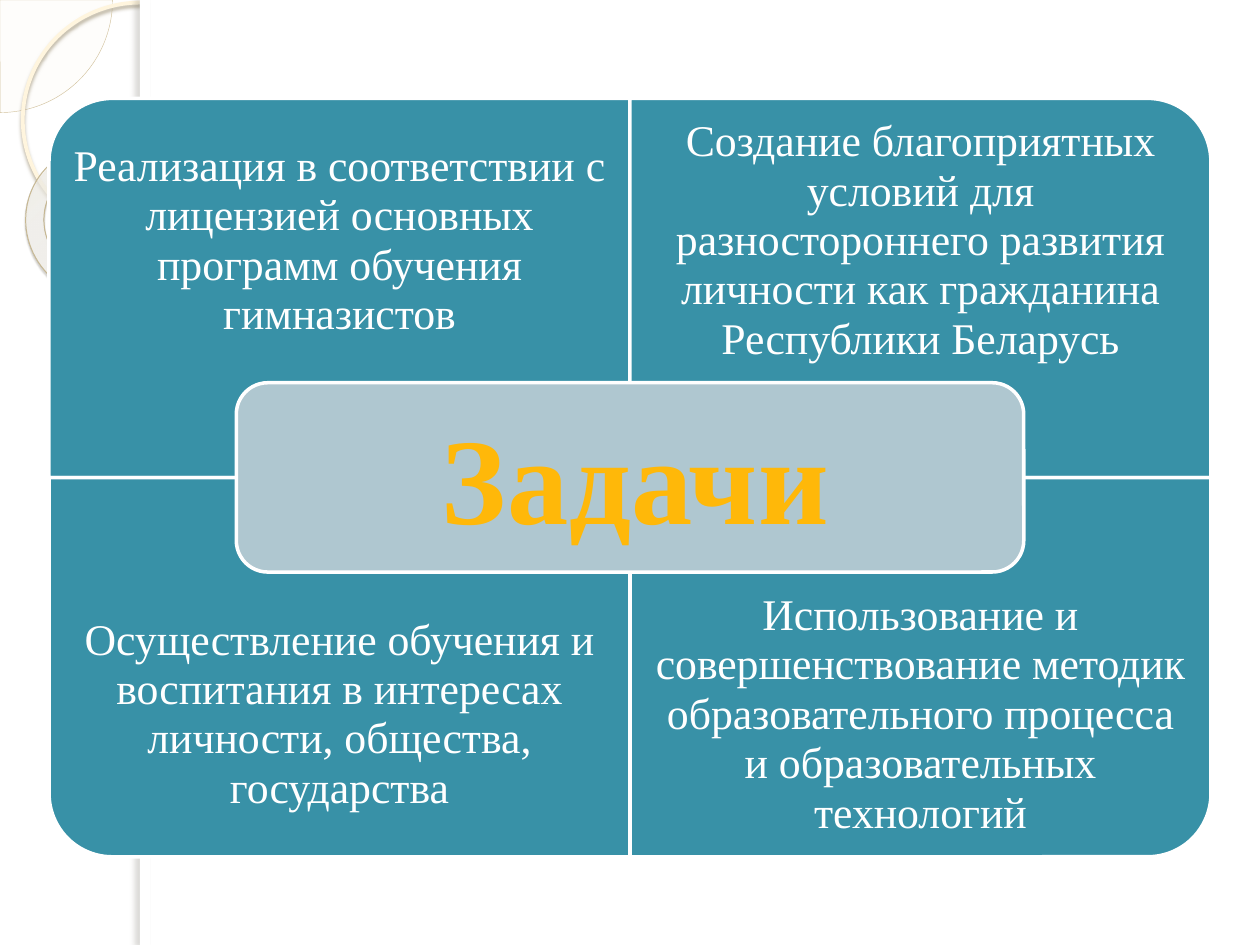
from pptx import Presentation
from pptx.dml.color import RGBColor
from pptx.enum.shapes import MSO_SHAPE
from pptx.enum.text import MSO_ANCHOR, MSO_AUTO_SIZE, PP_ALIGN
from pptx.oxml import parse_xml
from pptx.oxml.ns import nsdecls, qn
from pptx.util import Pt

COLORS = {
    "white": "FFFFFF", "card": "3891A7", "center": "AFC7D0", "gold": "FFB809",
    "pie": "FEFAF4", "pie_line": "D3C39F", "ring": "FFF5DE",
    "ring_shadow": "B0A68F", "donut_line": "C7B893", "donut_shadow": "5A5444",
    "strip_shadow": "736F63", "donut_inner": "FFFCF6", "donut_middle": "FFFEFB",
    "donut_outer": "F0D28E",
}
FONT = "Times New Roman"
CARD_FRAME = {
    "margin_left": Pt(13.5), "margin_right": Pt(13.5),
    "margin_top": Pt(13.5), "margin_bottom": Pt(13.5),
    "vertical_anchor": MSO_ANCHOR.MIDDLE, "word_wrap": True,
}
CARD_PARAGRAPH = {"alignment": PP_ALIGN.CENTER, "line_spacing": 0.94, "space_after": Pt(8.75)}
CARD_FONT = {"name": FONT, "size": Pt(25), "bold": False}
TITLE_FRAME = {
    "auto_size": MSO_AUTO_SIZE.NONE, "margin_top": Pt(10), "margin_bottom": Pt(0),
    "vertical_anchor": MSO_ANCHOR.TOP, "word_wrap": True,
}
TITLE_PARAGRAPH = {"alignment": PP_ALIGN.CENTER, "line_spacing": 1.0, "space_before": Pt(0)}
TITLE_FONT = {"name": FONT, "size": Pt(70), "bold": True}


def apply(target, values):
    """Set every attribute named in values on target."""
    for name, value in values.items():
        setattr(target, name, value)


class SlideBuilder:
    """Hold the palette and the slide that is being built."""

    def __init__(self, slide, colors):
        """Keep the slide and its colours."""
        self.slide = slide
        self.colors = colors

    def rgb(self, name):
        """Return a palette colour."""
        return RGBColor.from_string(self.colors[name])

    def color_xml(self, name, alpha):
        """Return a colour with opacity in percent."""
        return f'<a:srgbClr val="{self.colors[name]}"><a:alpha val="{alpha * 1000}"/></a:srgbClr>'

    def shape(self, kind, box, fill=None, line=None, shadow=None, alpha=100, rotation=0):
        """Add a preset shape."""
        part = self.slide.shapes.add_shape(kind, *map(Pt, box))
        part.rotation = rotation
        part.shadow.inherit = False
        if fill:
            part.fill.solid()
            part.fill.fore_color.rgb = self.rgb(fill)
            if alpha < 100:
                solid = part.element.spPr.find(qn("a:solidFill"))
                solid[0].append(parse_xml(f'<a:alpha {nsdecls("a")} val="{alpha * 1000}"/>'))
        else:
            part.fill.background()
        if line:
            name, width = line
            part.line.color.rgb = self.rgb(name)
            part.line.width = Pt(width)
        else:
            part.line.fill.background()
        if shadow:
            name, opacity, blur, distance, angle = shadow
            part.element.spPr.find(qn("a:effectLst")).append(parse_xml(
                f'<a:outerShdw {nsdecls("a")} blurRad="{Pt(blur)}" dist="{Pt(distance)}" '
                f'dir="{angle * 60000}" algn="tl" rotWithShape="0">'
                f'{self.color_xml(name, opacity)}</a:outerShdw>'))
        return part

    def radial_fill(self, part, stops, focus):
        """Replace a solid fill with a circular gradient."""
        stop_xml = "".join(
            f'<a:gs pos="{place * 1000}">{self.color_xml(name, alpha)}</a:gs>'
            for place, name, alpha in stops)
        edges = " ".join(f'{side}="{value * 1000}"' for side, value in zip("ltrb", focus))
        solid = part.element.spPr.find(qn("a:solidFill"))
        part.element.spPr.replace(solid, parse_xml(
            f'<a:gradFill {nsdecls("a")} rotWithShape="1"><a:gsLst>{stop_xml}</a:gsLst>'
            f'<a:path path="circle"><a:fillToRect {edges}/></a:path></a:gradFill>'))

    def set_wording(self, frame, wording, color, frame_style, paragraph_style, font_style):
        """Fill a text frame with one formatted paragraph."""
        apply(frame, frame_style)
        paragraph = frame.paragraphs[0]
        apply(paragraph, paragraph_style)
        run = paragraph.add_run()
        run.text = wording
        apply(run.font, font_style)
        run.font.color.rgb = self.rgb(color)

    def text(self, box, wording):
        """Add the wording of a card."""
        frame = self.slide.shapes.add_textbox(*map(Pt, box)).text_frame
        self.set_wording(frame, wording, "white", CARD_FRAME, CARD_PARAGRAPH, CARD_FONT)

    def title(self, box, wording):
        """Place the title above all other parts."""
        heading = self.slide.shapes.title
        apply(heading, dict(zip(("left", "top", "width", "height"), map(Pt, box))))
        self.set_wording(heading.text_frame, wording, "gold", TITLE_FRAME, TITLE_PARAGRAPH, TITLE_FONT)
        for properties in heading.element.iter(qn("a:rPr")):
            properties.set("spc", "50")
        self.slide.shapes.element.append(heading.element)


presentation = Presentation()
presentation.slide_width, presentation.slide_height = Pt(720), Pt(540)
builder = SlideBuilder(presentation.slides.add_slide(presentation.slide_layouts[5]), COLORS)

corner = builder.shape(MSO_SHAPE.PIE, (-64.3, -64.3, 128.6, 128.6), "pie", ("pie_line", 0.25), alpha=33)
corner.adjustments[0], corner.adjustments[1] = 0, 54
builder.shape(MSO_SHAPE.OVAL, (13, 1.5, 134, 134), line=("ring", 2.15),
              shadow=("ring_shadow", 85, 2, 2, 90))
donut = builder.shape(MSO_SHAPE.DONUT, (14.4, 82.8, 88.6, 87.1), "donut_inner", ("donut_line", 0.58),
                      ("donut_shadow", 35, 1, 1.2, 75), rotation=38.6)
donut.adjustments[0] = 0.12
builder.radial_fill(donut, [(0, "donut_inner", 70), (70, "donut_middle", 55), (100, "donut_outer", 60)],
                    (-408, -50, 508, 150))
builder.shape(MSO_SHAPE.RECTANGLE, (80, 0, 640, 540), "white")
builder.shape(MSO_SHAPE.RECTANGLE, (80, 0, 5.8, 540), "white", shadow=("strip_shadow", 25, 3, 3, 180))

LEFT, TOP, WIDTH, HEIGHT, TEXT_HEIGHT = 28, 56.2, 332, 216.7, 162.6
CARDS = [
    ("Реализация в соответствии с лицензией основных программ обучения гимназистов", 270),
    ("Создание благоприятных условий для разностороннего развития личности как гражданина "
     "Республики Беларусь", 0),
    ("Осуществление обучения и воспитания в интересах личности, общества, государства", 180),
    ("Использование и совершенствование методик образовательного процесса и образовательных "
     "технологий", 90),
]
for index, (task, rotation) in enumerate(CARDS):
    row, column = divmod(index, 2)
    left, top = LEFT + column * WIDTH, TOP + row * HEIGHT
    width, height = (HEIGHT, WIDTH) if rotation in (90, 270) else (WIDTH, HEIGHT)
    box = (left + (WIDTH - width) / 2, top + (HEIGHT - height) / 2, width, height)
    builder.shape(MSO_SHAPE.ROUND_1_RECTANGLE, box, "card", ("white", 2), rotation=rotation)
    builder.text((left, top + row * (HEIGHT - TEXT_HEIGHT), WIDTH, TEXT_HEIGHT), task)

builder.shape(MSO_SHAPE.ROUNDED_RECTANGLE, (135, 218.7, 450, 108.2), "center", ("white", 2))
builder.title((163.5, 219.6, 399.6, 92.2), "Задачи")
presentation.save("out.pptx")
